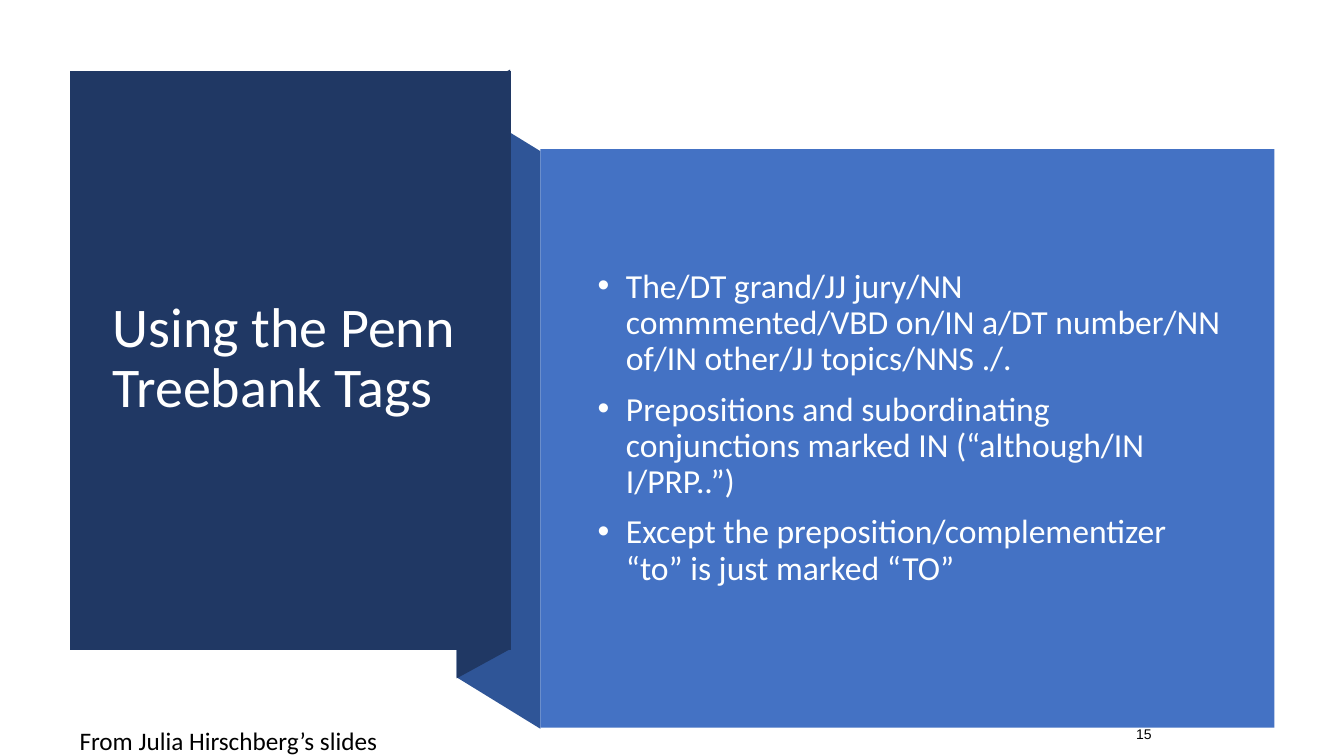
"""Build the slide on Penn Treebank tags with a folded-ribbon panel layout."""
from dataclasses import dataclass

from lxml import etree
from pptx import Presentation
from pptx.dml.color import RGBColor
from pptx.enum.shapes import MSO_SHAPE
from pptx.enum.text import MSO_ANCHOR, PP_ALIGN
from pptx.oxml.ns import qn
from pptx.util import Inches, Pt

RECTANGLE = MSO_SHAPE.RECTANGLE
TOP, MIDDLE, BOTTOM = MSO_ANCHOR.TOP, MSO_ANCHOR.MIDDLE, MSO_ANCHOR.BOTTOM
LEFT, RIGHT = PP_ALIGN.LEFT, PP_ALIGN.RIGHT

NAVY, FOLD_BLUE, PANEL_BLUE = "203864", "2F5597", "4472C4"
WHITE, OFF_WHITE, BLACK = "FFFFFF", "FEFFFF", "000000"


@dataclass(frozen=True)
class Panel:
    points: tuple[tuple[float, float], ...]
    color: str


@dataclass(frozen=True)
class TextBlock:
    box: tuple[float, float, float, float]
    paragraphs: tuple[str, ...]
    size: float
    color: str
    font: str = "Calibri"
    anchor: MSO_ANCHOR = TOP
    alignment: PP_ALIGN = LEFT
    line_spacing: float = 1.0
    space_before: float = 0
    space_after: float = 0
    bulleted: bool = False
    wrap: bool = True


FOLDS = (
    Panel(((5.36, 7.23), (4.53, 6.72), (4.53, 0.99), (5.36, 1.5)), FOLD_BLUE),
    Panel(((5.06, 6.44), (4.53, 6.73), (4.53, 0.98), (5.06, 0.69)), NAVY),
    Panel(((0.69, 0.7), (5.07, 0.7), (5.07, 6.45), (0.69, 6.45)), NAVY),
)
BODY_PANEL = (5.36, 1.48, 7.28, 5.74)

TEXT_BLOCKS = (
    TextBlock((1.02, 1.07, 3.71, 4.99), ("Using the Penn Treebank Tags",), 40, WHITE,
              anchor=MIDDLE, line_spacing=0.9),
    TextBlock(
        (5.71, 1.88, 6.51, 4.74),
        (
            "The/DT grand/JJ jury/NN commmented/VBD on/IN a/DT number/NN "
            "of/IN other/JJ topics/NNS ./.",
            "Prepositions and subordinating conjunctions marked IN (“although/IN I/PRP..”)",
            "Except the preposition/complementizer “to” is just marked “TO”",
        ),
        24, OFF_WHITE, anchor=MIDDLE, line_spacing=0.9, space_before=10, bulleted=True,
    ),
    TextBlock((11.12, 7.01, 0.4, 0.4), ("15",), 10, BLACK, font="Arial",
              anchor=BOTTOM, alignment=RIGHT, space_after=6),
    TextBlock((0.69, 7.15, 3.25, 0.4), ("From Julia Hirschberg’s slides",), 18, BLACK,
              wrap=False),
)


def rgb(color: str) -> RGBColor:
    return RGBColor.from_string(color)


def paint(shape, color: str) -> None:
    shape.shadow.inherit = False
    shape.fill.solid()
    shape.fill.fore_color.rgb = rgb(color)
    shape.line.fill.background()


def draw_fold(slide, panel: Panel) -> None:
    start, *others = [(Inches(x), Inches(y)) for x, y in panel.points]
    builder = slide.shapes.build_freeform(*start)
    builder.add_line_segments(others, close=True)
    paint(builder.convert_to_shape(), panel.color)


def draw_body_panel(slide) -> None:
    shape = slide.shapes.add_shape(RECTANGLE, *map(Inches, BODY_PANEL))
    paint(shape, PANEL_BLUE)


def add_bullet(paragraph) -> None:
    properties = paragraph._p.get_or_add_pPr()
    properties.set("marL", str(Inches(0.4)))
    properties.set("indent", str(Inches(-0.28)))
    etree.SubElement(properties, qn("a:buFont"), typeface="Arial")
    etree.SubElement(properties, qn("a:buChar"), char="•")


def draw_text(slide, block: TextBlock) -> None:
    frame = slide.shapes.add_textbox(*map(Inches, block.box)).text_frame
    frame.word_wrap = block.wrap
    frame.vertical_anchor = block.anchor
    for index, text in enumerate(block.paragraphs):
        paragraph = frame.add_paragraph() if index else frame.paragraphs[0]
        paragraph.alignment = block.alignment
        paragraph.line_spacing = block.line_spacing
        paragraph.space_before = Pt(block.space_before)
        paragraph.space_after = Pt(block.space_after)
        if block.bulleted:
            add_bullet(paragraph)
        run = paragraph.add_run()
        run.text = text
        run.font.name = block.font
        run.font.size = Pt(block.size)
        run.font.color.rgb = rgb(block.color)


def main() -> None:
    presentation = Presentation()
    presentation.slide_width = Inches(13.33)
    presentation.slide_height = Inches(7.5)
    slide = presentation.slides.add_slide(presentation.slide_layouts[6])
    for fold in FOLDS:
        draw_fold(slide, fold)
    draw_body_panel(slide)
    for block in TEXT_BLOCKS:
        draw_text(slide, block)
    presentation.save("out.pptx")


if __name__ == "__main__":
    main()
